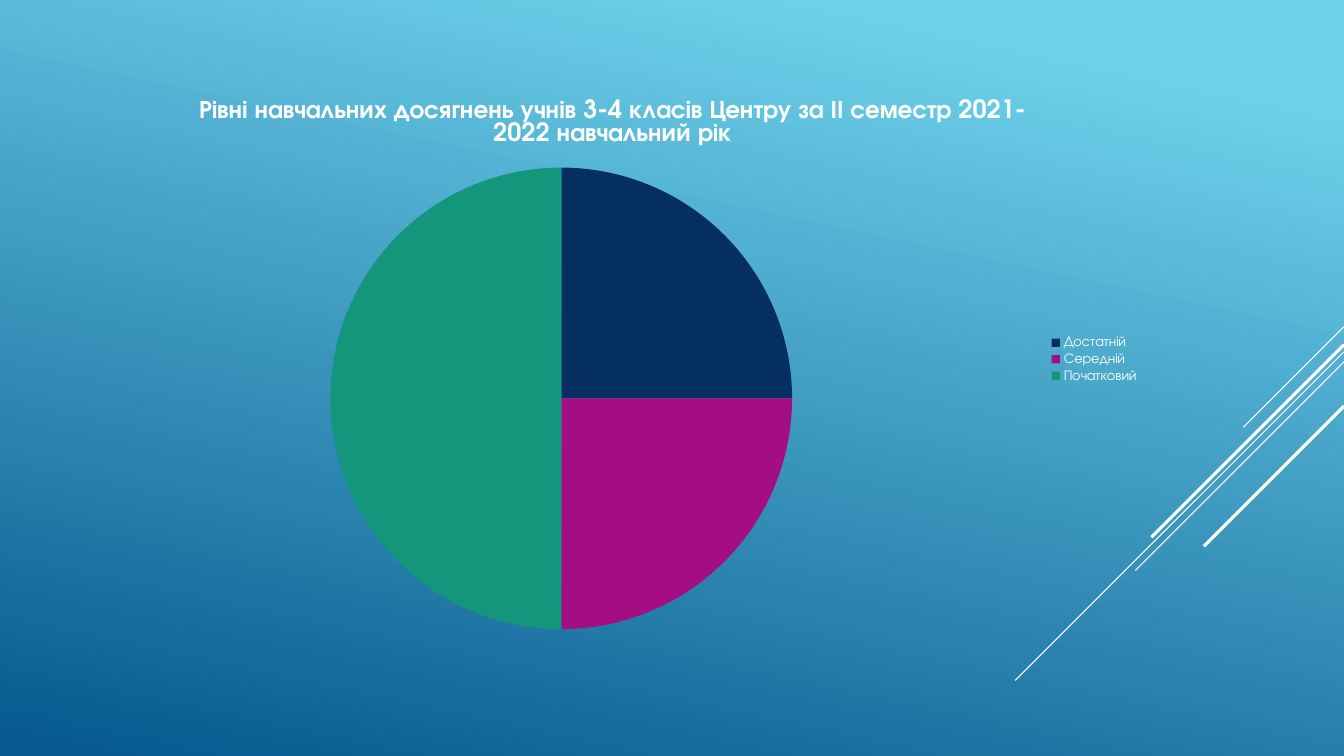
from dataclasses import dataclass

import pptx
import pptx.chart.data
import pptx.dml.color
import pptx.enum.chart
import pptx.enum.shapes
import pptx.oxml
import pptx.oxml.ns
import pptx.slide
import pptx.text.text
import pptx.util

RGBColor = pptx.dml.color.RGBColor
Inches = pptx.util.Inches
Pt = pptx.util.Pt

WHITE = RGBColor(0xFF, 0xFF, 0xFF)
SKY = RGBColor(0x6E, 0xD2, 0xEB)
DEEP_BLUE = RGBColor(0x06, 0x58, 0x8E)
NAVY = RGBColor(0x05, 0x2F, 0x61)
MAGENTA = RGBColor(0xA5, 0x0E, 0x82)
GREEN = RGBColor(0x14, 0x96, 0x7C)

FONT = "TeX Gyre Adventor"
SLIDE_W = 13.33
SLIDE_H = 7.5
TITLE = (
    "Рівні навчальних досягнень учнів 3-4 класів Центру "
    "за ІІ семестр 2021-2022 навчальний рік"
)


@dataclass
class Ray:
    top: float
    reach: float
    width: float


@dataclass
class Level:
    name: str
    value: int
    color: RGBColor


RAYS = [
    Ray(3.24, 1.0, 0.75),
    Ray(3.49, 3.26, 0.75),
    Ray(3.59, 2.07, 0.75),
    Ray(3.42, 1.91, 2.25),
    Ray(4.03, 1.39, 2.25),
]

LEVELS = [
    Level("Достатній", 25, NAVY),
    Level("Середній", 25, MAGENTA),
    Level("Початковий", 50, GREEN),
]


def format_font(font: pptx.text.text.Font, size: float, bold: bool = False) -> None:
    font.name = FONT
    font.size = Pt(size)
    font.bold = bold
    font.color.rgb = WHITE


def write_text(tf: pptx.text.text.TextFrame, text: str, **fmt) -> None:
    r = tf.paragraphs[0].add_run()
    r.text = text
    format_font(r.font, **fmt)


def paint_background(s: pptx.slide.Slide) -> None:
    fill = s.background.fill
    fill.gradient()
    fill.gradient_angle = 360 - 102
    for stop, position, color in zip(fill.gradient_stops, (0.1, 1), (SKY, DEEP_BLUE)):
        stop.position = position
        stop.color.rgb = color


def draw_ray(s: pptx.slide.Slide, ray: Ray) -> None:
    line = s.shapes.add_connector(
        pptx.enum.shapes.MSO_CONNECTOR.STRAIGHT,
        Inches(SLIDE_W),
        Inches(ray.top),
        Inches(SLIDE_W - ray.reach),
        Inches(ray.top + ray.reach),
    )
    line.line.color.rgb = WHITE
    line.line.width = Pt(ray.width)
    sp_pr = line._element.spPr
    sp_pr.append(pptx.oxml.parse_xml(f"<a:effectLst {pptx.oxml.ns.nsdecls('a')}/>"))


def draw_pie(s: pptx.slide.Slide, levels: list[Level]) -> None:
    data = pptx.chart.data.CategoryChartData()
    data.categories = [level.name for level in levels]
    data.add_series("Series 1", [level.value for level in levels])
    chart = s.shapes.add_chart(
        pptx.enum.chart.XL_CHART_TYPE.PIE,
        Inches(0.75),
        Inches(0.75),
        Inches(10.65),
        Inches(5.63),
        data,
    ).chart
    format_font(chart.font, size=10)
    write_text(chart.chart_title.text_frame, TITLE, size=18, bold=True)
    chart.chart_title.include_in_layout = False
    chart.has_legend = True
    chart.legend.position = pptx.enum.chart.XL_LEGEND_POSITION.RIGHT
    chart.legend.include_in_layout = False
    plot = chart.plots[0]
    plot.vary_by_categories = True
    for i, level in enumerate(levels):
        fill = plot.series[0].points[i].format.fill
        fill.solid()
        fill.fore_color.rgb = level.color


def main() -> None:
    prs = pptx.Presentation()
    prs.slide_width = Inches(SLIDE_W)
    prs.slide_height = Inches(SLIDE_H)
    s = prs.slides.add_slide(prs.slide_layouts[6])
    paint_background(s)
    for ray in RAYS:
        draw_ray(s, ray)
    draw_pie(s, LEVELS)
    prs.save("out.pptx")


if __name__ == "__main__":
    main()
